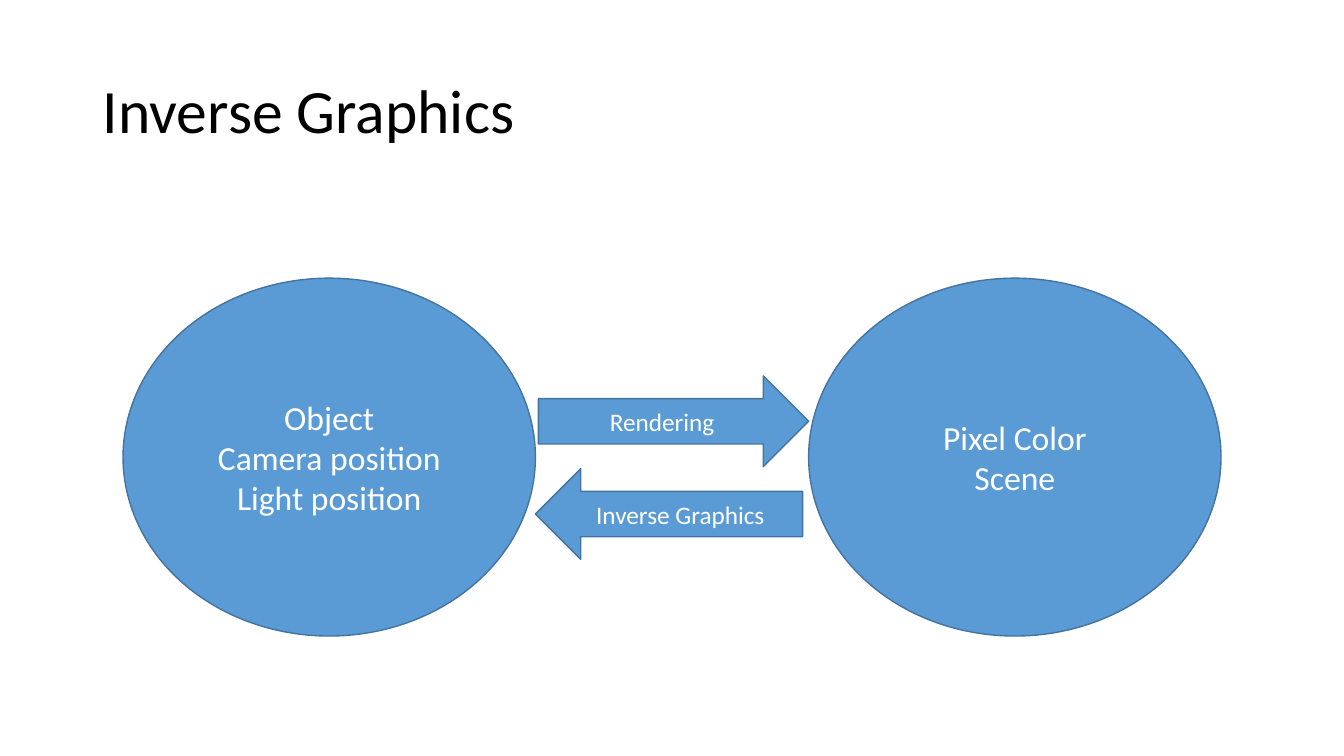
from dataclasses import dataclass

from pptx import Presentation
from pptx.dml.color import RGBColor
from pptx.enum.shapes import MSO_SHAPE
from pptx.enum.text import MSO_ANCHOR, PP_ALIGN
from pptx.slide import Slide
from pptx.text.text import TextFrame
from pptx.util import Inches, Pt

OVAL = MSO_SHAPE.OVAL
RIGHT_ARROW = MSO_SHAPE.RIGHT_ARROW
LEFT_ARROW = MSO_SHAPE.LEFT_ARROW
MIDDLE = MSO_ANCHOR.MIDDLE
LEFT = PP_ALIGN.LEFT
CENTER = PP_ALIGN.CENTER

BLACK = RGBColor(0x00, 0x00, 0x00)
WHITE = RGBColor(0xFF, 0xFF, 0xFF)
BLUE = RGBColor(0x5B, 0x9B, 0xD5)
DARK_BLUE = RGBColor(0x43, 0x73, 0x9E)
FONT = "Calibri"

OVAL_TOP, OVAL_WIDTH, OVAL_HEIGHT = 2.76, 4.09, 3.55
ARROW_HEIGHT = 0.9


@dataclass(frozen=True)
class Node:
    kind: MSO_SHAPE
    left: float
    top: float
    width: float
    height: float
    text: str
    size: int


NODES = [
    Node(OVAL, 1.22, OVAL_TOP, OVAL_WIDTH, OVAL_HEIGHT,
         "Object\nCamera position\nLight position", 24),
    Node(RIGHT_ARROW, 5.34, 3.73, 2.68, ARROW_HEIGHT, "Rendering", 18),
    Node(OVAL, 8.02, OVAL_TOP, OVAL_WIDTH, OVAL_HEIGHT,
         "Pixel Color\nScene", 24),
    Node(LEFT_ARROW, 5.31, 4.65, 2.65, ARROW_HEIGHT, "Inverse Graphics", 18),
]


def write_text(frame: TextFrame, text: str, size: int, color: RGBColor,
               alignment: PP_ALIGN) -> None:
    frame.text = text
    frame.word_wrap = True
    frame.vertical_anchor = MIDDLE
    for paragraph in frame.paragraphs:
        paragraph.alignment = alignment
        for run in paragraph.runs:
            run.font.name = FONT
            run.font.size = Pt(size)
            run.font.color.rgb = color


def add_title(slide: Slide, text: str) -> None:
    title = slide.shapes.title
    title.left, title.top = Inches(0.92), Inches(0.4)
    title.width, title.height = Inches(11.5), Inches(1.45)
    write_text(title.text_frame, text, 44, BLACK, LEFT)
    title.text_frame.paragraphs[0].line_spacing = 0.9


def add_node(slide: Slide, node: Node) -> None:
    shape = slide.shapes.add_shape(
        node.kind, Inches(node.left), Inches(node.top),
        Inches(node.width), Inches(node.height))
    shape.shadow.inherit = False
    shape.fill.solid()
    shape.fill.fore_color.rgb = BLUE
    shape.line.color.rgb = DARK_BLUE
    shape.line.width = Pt(1)
    write_text(shape.text_frame, node.text, node.size, WHITE, CENTER)


def main() -> None:
    presentation = Presentation()
    presentation.slide_width = Inches(13.33)
    presentation.slide_height = Inches(7.5)
    title_only = presentation.slide_layouts[5]
    slide = presentation.slides.add_slide(title_only)

    # Title
    add_title(slide, "Inverse Graphics")

    # Scene and image ovals, joined by the two arrows
    for node in NODES:
        add_node(slide, node)

    presentation.save("out.pptx")


if __name__ == "__main__":
    main()
